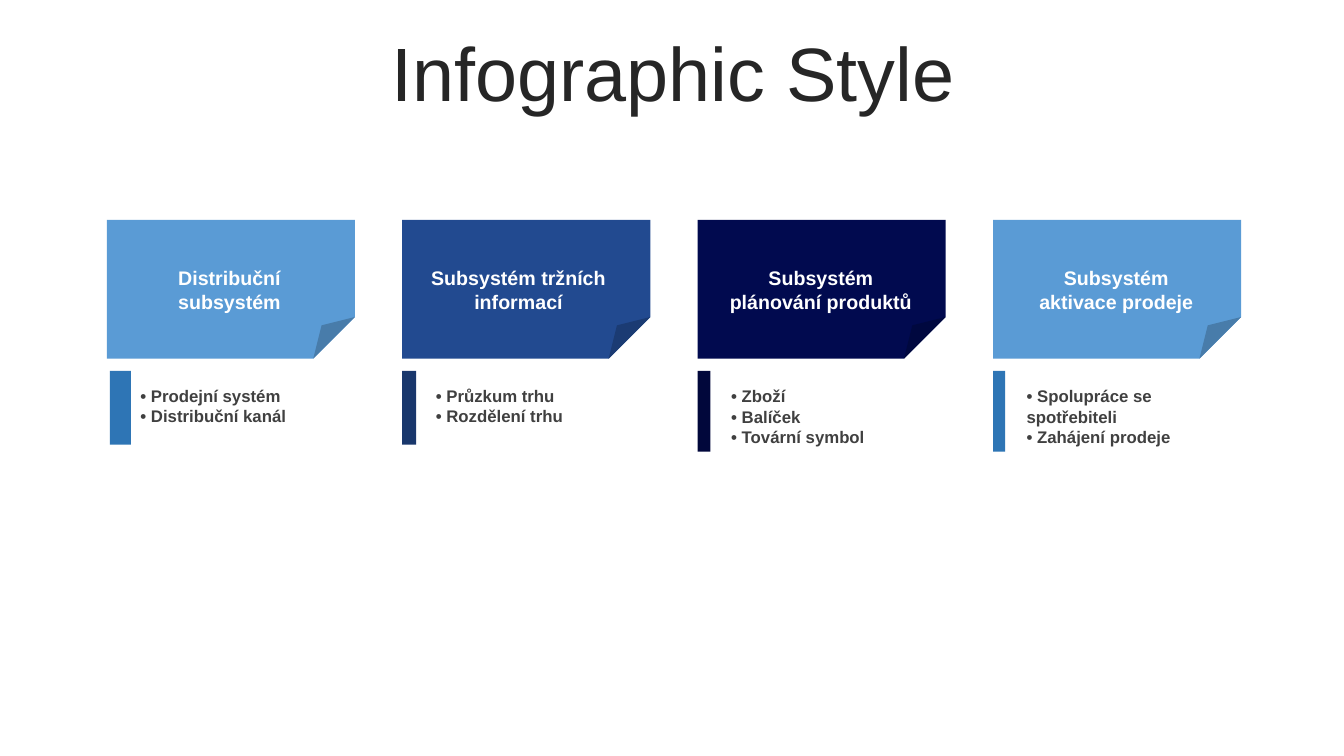
from lxml.etree import SubElement
from pptx import Presentation
from pptx.dml.color import RGBColor
from pptx.enum.shapes import MSO_SHAPE
from pptx.enum.text import MSO_ANCHOR, PP_ALIGN
from pptx.oxml.ns import qn
from pptx.util import Pt

FIRST_LEFT, COLUMN_STEP = 76.3, 211
CARD_TOP, CARD_WIDTH, CARD_HEIGHT = 157, 177.2, 99.2
HEADING_TOP, HEADING_HEIGHT = 186.5, 41
BAR_TOP, LIST_TOP, LIST_WIDTH, LIST_INDENT = 265, 272.2, 157.7, 16.9

# heading and bar: (offset from the column's left edge, width)
COLUMNS = [
    {"heading": "Distribuční subsystém", "heading_span": (43.9, 159.1),
     "align": PP_ALIGN.LEFT, "card": "5A9BD5", "bar": "2E75B5",
     "bar_span": (2.2, 15), "bar_height": 52.6, "list_height": 36,
     "items": ["Prodejní systém", "Distribuční kanál"]},
    {"heading": "Subsystém tržních informací", "heading_span": (10, 146.2),
     "align": PP_ALIGN.CENTER, "card": "224A90", "bar": "19376C",
     "bar_span": (0, 10), "bar_height": 52.6, "list_height": 36,
     "items": ["Průzkum trhu", "Rozdělení trhu"]},
    {"heading": "Subsystém plánování produktů", "heading_span": (15, 146.2),
     "align": PP_ALIGN.CENTER, "card": "010A4F", "bar": "01073B",
     "bar_span": (0, 9.2), "bar_height": 57.6, "list_height": 51,
     "items": ["Zboží", "Balíček", "Tovární symbol"]},
    {"heading": "Subsystém aktivace prodeje", "heading_span": (15, 146.2),
     "align": PP_ALIGN.CENTER, "card": "5A9BD5", "bar": "2E75B5",
     "bar_span": (0, 8.6), "bar_height": 57.6, "list_height": 51,
     "items": ["Spolupráce se spotřebiteli", "Zahájení prodeje"]},
]


def color(hex_value):
    return RGBColor.from_string(hex_value)


def apply_format(target, values):
    for name, value in values.items():
        setattr(target, name, value)


def add_block(page, kind, left, top, width, height, fill):
    """Add a plain filled shape without outline or shadow."""
    block = page.shapes.add_shape(kind, Pt(left), Pt(top), Pt(width), Pt(height))
    block.shadow.inherit = False
    block.fill.solid()
    block.fill.fore_color.rgb = color(fill)
    block.line.fill.background()
    return block


def set_fold(card, share):
    """Set the size of the folded corner as a share of the short side."""
    guides = next(card.element.iter(qn("a:avLst")))
    SubElement(guides, qn("a:gd"), name="adj", fmla=f"val {round(share * 100000)}")


def add_text(page, left, top, width, height, lines, size, ink,
             bold=True, anchor=MSO_ANCHOR.TOP, paragraph_format=None):
    """Add a wrapping text box with one paragraph per line."""
    box = page.shapes.add_textbox(Pt(left), Pt(top), Pt(width), Pt(height))
    frame = box.text_frame
    apply_format(frame, {"word_wrap": True, "vertical_anchor": anchor})
    for index, line in enumerate(lines):
        para = frame.add_paragraph() if index else frame.paragraphs[0]
        apply_format(para, paragraph_format or {})
        span = para.add_run()
        span.text = line
        apply_format(span.font, {"name": "Arial", "size": Pt(size), "bold": bold})
        span.font.color.rgb = color(ink)


def add_column(page, left, column):
    # Card with folded corner
    card = add_block(page, MSO_SHAPE.FOLDED_CORNER, left, CARD_TOP,
                     CARD_WIDTH, CARD_HEIGHT, column["card"])
    set_fold(card, 0.3)

    # Heading on the card
    offset, width = column["heading_span"]
    add_text(page, left + offset, HEADING_TOP, width, HEADING_HEIGHT,
             [column["heading"]], 14, "FFFFFF",
             paragraph_format={"alignment": column["align"]})

    # Accent bar and list below
    offset, width = column["bar_span"]
    add_block(page, MSO_SHAPE.RECTANGLE, left + offset, BAR_TOP,
              width, column["bar_height"], column["bar"])
    add_text(page, left + LIST_INDENT, LIST_TOP, LIST_WIDTH,
             column["list_height"],
             [f"• {item}" for item in column["items"]], 12, "404040")


def main():
    deck = Presentation()
    apply_format(deck, {"slide_width": Pt(960), "slide_height": Pt(540)})
    page = deck.slides.add_slide(deck.slide_layouts[6])

    # Title
    add_text(page, 25.2, 26.6, 911.5, 57, ["Infographic Style"], 54, "262626",
             bold=False, anchor=MSO_ANCHOR.MIDDLE,
             paragraph_format={"alignment": PP_ALIGN.CENTER,
                               "line_spacing": 0.9, "space_before": Pt(10)})

    # Four subsystem columns
    for index, column in enumerate(COLUMNS):
        add_column(page, FIRST_LEFT + index * COLUMN_STEP, column)

    deck.save("out.pptx")


if __name__ == "__main__":
    main()
